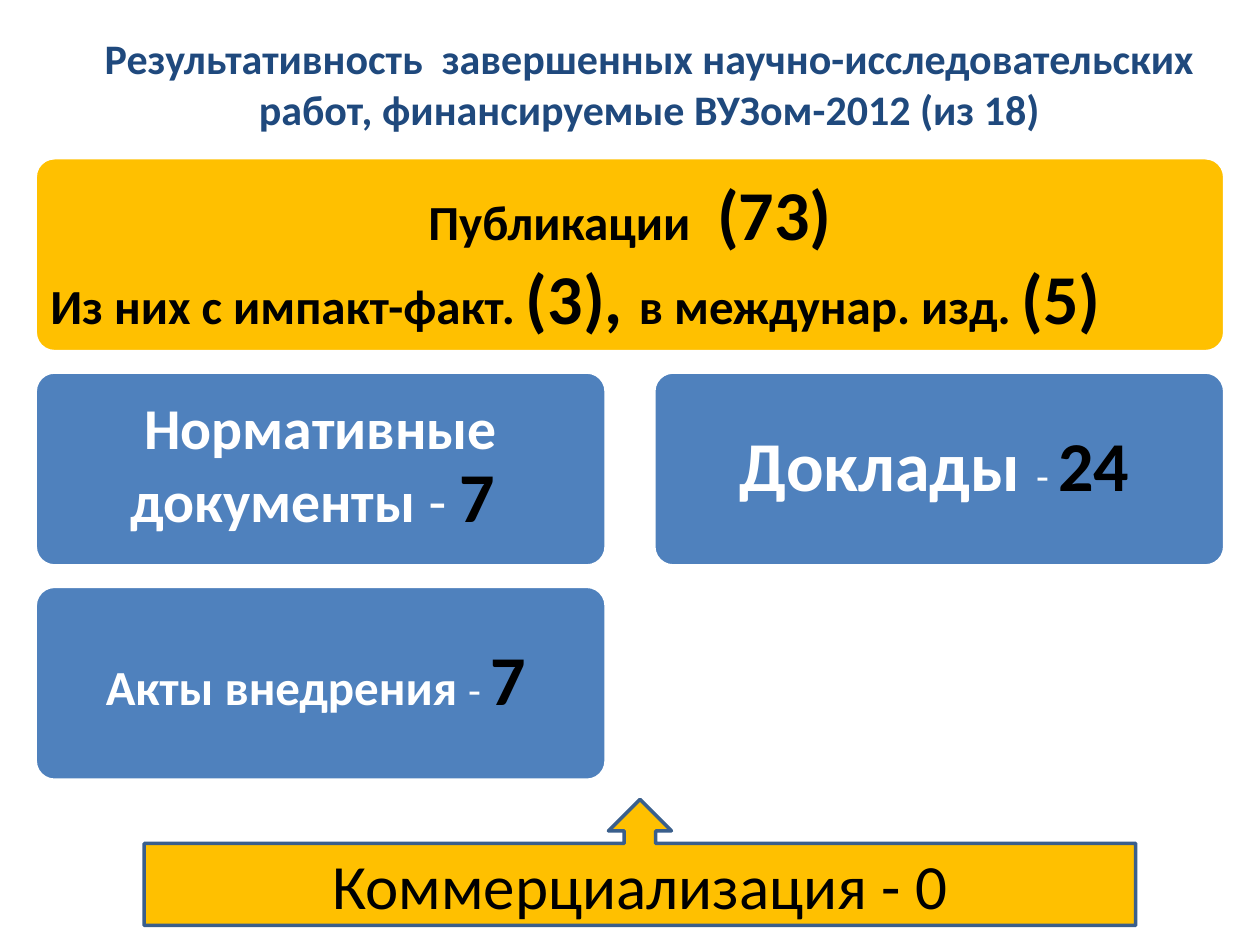
from dataclasses import dataclass

from pptx import Presentation
from pptx.dml.color import RGBColor
from pptx.enum.shapes import MSO_SHAPE as Shape
from pptx.enum.text import MSO_ANCHOR as Anchor, MSO_AUTO_SIZE as AutoSize, PP_ALIGN as Align
from pptx.util import Cm, Pt

FONT = "Calibri"
WHITE = RGBColor(0xFF, 0xFF, 0xFF)
BLACK = RGBColor(0x00, 0x00, 0x00)
NAVY = RGBColor(0x1F, 0x49, 0x7D)
BLUE = RGBColor(0x4F, 0x81, 0xBD)
AMBER = RGBColor(0xFF, 0xC0, 0x00)
OUTLINE = RGBColor(0x3A, 0x5F, 0x8C)

# Card grid, in centimetres
LEFT, TOP = 0.71, 3.18
CARD_W, CARD_H = 11.51, 3.91
COL_GAP, ROW_GAP = 0.96, 0.41


@dataclass
class Piece:
    text: str
    size: int
    color: RGBColor = BLACK
    bold: bool = True


@dataclass
class Line:
    pieces: list[Piece]
    align: Align = Align.CENTER
    spacing: float = 0.9


@dataclass
class Card:
    row: int
    col: int
    fill: RGBColor
    inset: float
    lines: list[Line]
    span: int = 1


def style_shape(shape, fill: RGBColor, outline: RGBColor) -> None:
    shape.shadow.inherit = False
    shape.fill.solid()
    shape.fill.fore_color.rgb = fill
    shape.line.color.rgb = outline
    shape.line.width = Pt(2)


def write_line(paragraph, line: Line) -> None:
    paragraph.alignment = line.align
    paragraph.line_spacing = line.spacing
    paragraph.font.name = FONT
    for piece in line.pieces:
        run = paragraph.add_run()
        run.text = piece.text
        run.font.name = FONT
        run.font.size = Pt(piece.size)
        run.font.bold = piece.bold
        run.font.color.rgb = piece.color


def draw_card(slide, card: Card) -> None:
    width = card.span * CARD_W + (card.span - 1) * COL_GAP
    box = slide.shapes.add_shape(
        Shape.ROUNDED_RECTANGLE,
        Cm(LEFT + card.col * (CARD_W + COL_GAP)),
        Cm(TOP + card.row * (CARD_H + ROW_GAP)),
        Cm(width), Cm(CARD_H))
    box.adjustments[0] = 0.1
    style_shape(box, card.fill, WHITE)
    frame = box.text_frame
    frame.word_wrap = True
    frame.vertical_anchor = Anchor.MIDDLE
    frame.margin_left = frame.margin_right = Cm(card.inset)
    frame.margin_top = frame.margin_bottom = Cm(card.inset)
    for index, line in enumerate(card.lines):
        paragraph = frame.add_paragraph() if index else frame.paragraphs[0]
        write_line(paragraph, line)


CARDS = [
    Card(0, 0, AMBER, 0.19, [
        Line([Piece("Публикации ", 28), Piece(" (73)", 40)], spacing=1.0),
        Line([Piece("Из них с импакт-факт. ", 28), Piece("(3), ", 40),
              Piece("в междунар. изд. ", 28), Piece("(5)", 40)],
             Align.LEFT, 1.0),
    ], span=2),
    Card(1, 0, BLUE, 0.24, [
        Line([Piece("Нормативные документы ", 33, WHITE),
              Piece("- ", 33, WHITE, False), Piece("7 ", 40)])]),
    Card(2, 0, BLUE, 0.19, [
        Line([Piece("Акты внедрения ", 28, WHITE), Piece("- ", 24, WHITE, False),
              Piece("7", 40), Piece(" ", 24, WHITE, False)])]),
    Card(1, 1, BLUE, 0.32, [
        Line([Piece("Доклады ", 40, WHITE), Piece("- ", 24, WHITE, False),
              Piece("24", 40), Piece(" ", 24, WHITE, False)])]),
]


def main() -> None:
    prs = Presentation()
    prs.slide_width, prs.slide_height = Cm(25.4), Cm(19.05)
    slide = prs.slides.add_slide(prs.slide_layouts[5])

    # Title
    title = slide.shapes.title
    title.left, title.top = Cm(1.09), Cm(0.53)
    title.width, title.height = Cm(24), Cm(2.31)
    title.text_frame.auto_size = AutoSize.NONE
    title.text_frame.vertical_anchor = Anchor.TOP
    heading = ("Результативность  завершенных научно-исследовательских "
               "работ, финансируемые ВУЗом-2012 (из 18)")
    write_line(title.text_frame.paragraphs[0],
               Line([Piece(heading, 24, NAVY)], spacing=1.0))

    # Result cards
    for card in CARDS:
        draw_card(slide, card)

    # Callout turned to point up, its text kept horizontal
    callout = slide.shapes.add_shape(
        Shape.LEFT_ARROW_CALLOUT, Cm(11.63), Cm(7.39), Cm(2.54), Cm(19.99))
    callout.rotation = 90
    style_shape(callout, AMBER, OUTLINE)
    callout.text_frame.vertical_anchor = Anchor.MIDDLE
    callout.text_frame.word_wrap = True
    callout.text_frame._txBody.bodyPr.set("vert", "vert270")
    write_line(callout.text_frame.paragraphs[0],
               Line([Piece("Коммерциализация - 0", 36, bold=False)], spacing=1.0))

    prs.save("out.pptx")


if __name__ == "__main__":
    main()
